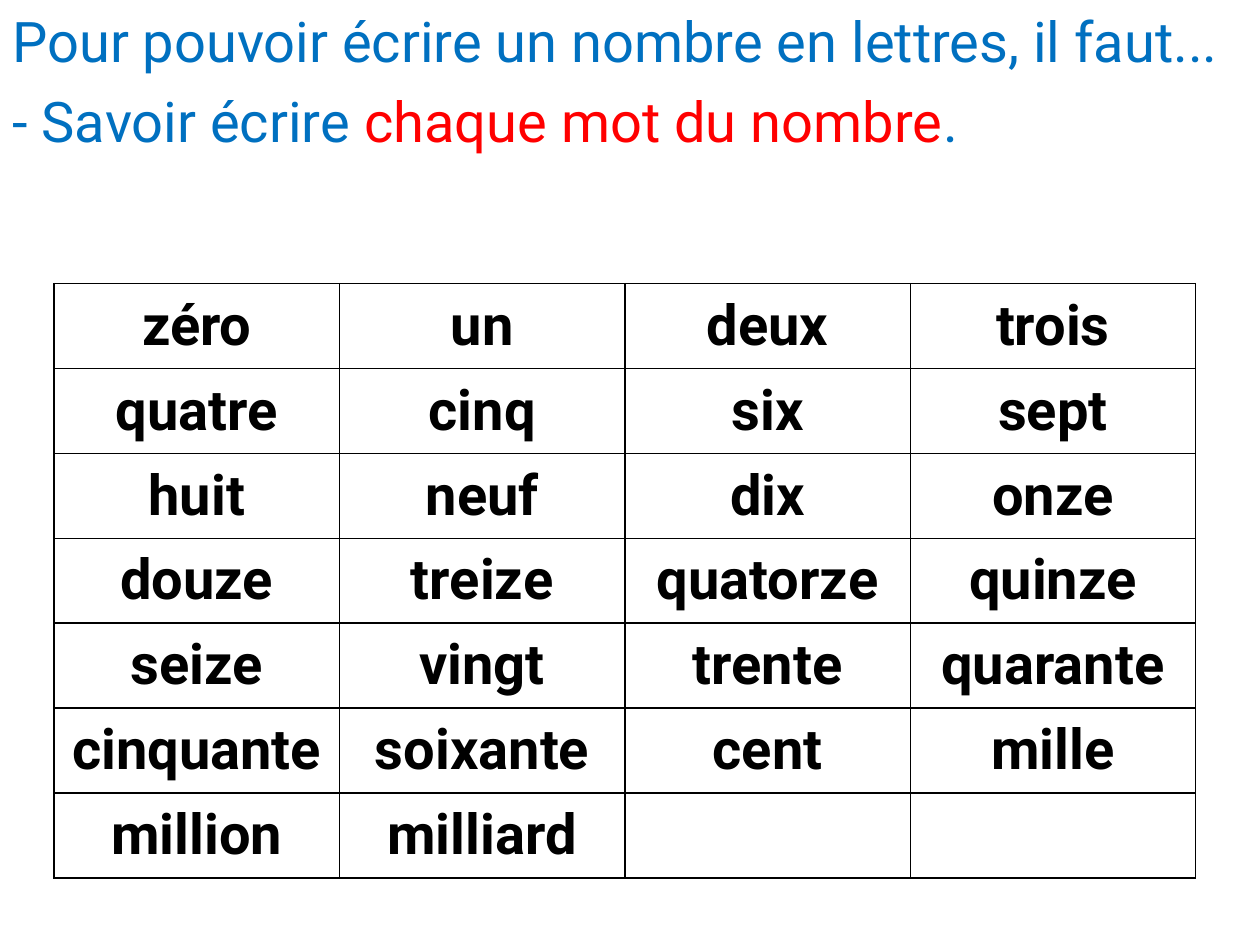
from lxml.etree import SubElement
from pptx import Presentation
from pptx.dml.color import RGBColor
from pptx.enum.text import MSO_ANCHOR, MSO_AUTO_SIZE, PP_ALIGN
from pptx.oxml.ns import qn
from pptx.util import Inches, Pt

FONT, SIZE = "Roboto", 32
BLUE, RED, BLACK, WHITE = "0070C0", "FF0000", "000000", "FFFFFF"
COLUMNS = 4
LINE_HEIGHT = 0.64

INSTRUCTIONS = [
    [("Pour pouvoir écrire un nombre en lettres, il faut...", BLUE)],
    [("- Savoir écrire ", BLUE), ("chaque mot du nombre", RED), (".", BLUE)],
]
NUMBER_WORDS = (
    "zéro un deux trois quatre cinq six sept huit neuf dix onze douze treize "
    "quatorze quinze seize vingt trente quarante cinquante soixante cent mille "
    "million milliard"
).split()


def color(value):
    return RGBColor.from_string(value)


def style(font, hex_color, bold=False):
    font.name, font.size, font.bold = FONT, Pt(SIZE), bold
    font.color.rgb = color(hex_color)


def add_instruction(slide, box, parts):
    frame = slide.shapes.add_textbox(*map(Inches, box)).text_frame
    frame.word_wrap = True
    frame.auto_size = MSO_AUTO_SIZE.SHAPE_TO_FIT_TEXT
    for words, hex_color in parts:
        run = frame.paragraphs[0].add_run()
        run.text = words
        style(run.font, hex_color)


def outline(cell, hex_color, width):
    """Draw all four borders; call before filling the cell."""
    properties = cell._tc.get_or_add_tcPr()
    for side in ("a:lnL", "a:lnR", "a:lnT", "a:lnB"):
        line = SubElement(properties, qn(side), w=str(Pt(width)))
        fill = SubElement(line, qn("a:solidFill"))
        SubElement(fill, qn("a:srgbClr"), val=hex_color)


def add_word_grid(slide, box, words):
    row_count = -(-len(words) // COLUMNS)
    table = slide.shapes.add_table(row_count, COLUMNS, *map(Inches, box)).table
    table.first_row = table.horz_banding = False
    for cell in table.iter_cells():
        outline(cell, BLACK, 1)
        cell.fill.solid()
        cell.fill.fore_color.rgb = color(WHITE)
        cell.vertical_anchor = MSO_ANCHOR.MIDDLE
    for cell, word in zip(table.iter_cells(), words):
        paragraph = cell.text_frame.paragraphs[0]
        paragraph.text = word
        paragraph.alignment = PP_ALIGN.CENTER
        style(paragraph.runs[0].font, BLACK, bold=True)


def main():
    presentation = Presentation()
    presentation.slide_width, presentation.slide_height = Inches(10), Inches(7.5)
    slide = presentation.slides.add_slide(presentation.slide_layouts[6])
    for index, parts in enumerate(INSTRUCTIONS):
        add_instruction(slide, (0, index * LINE_HEIGHT, 10, LINE_HEIGHT), parts)
    add_word_grid(slide, (0.43, 2.25, 9.06, 4.72), NUMBER_WORDS)
    presentation.save("out.pptx")


if __name__ == "__main__":
    main()
